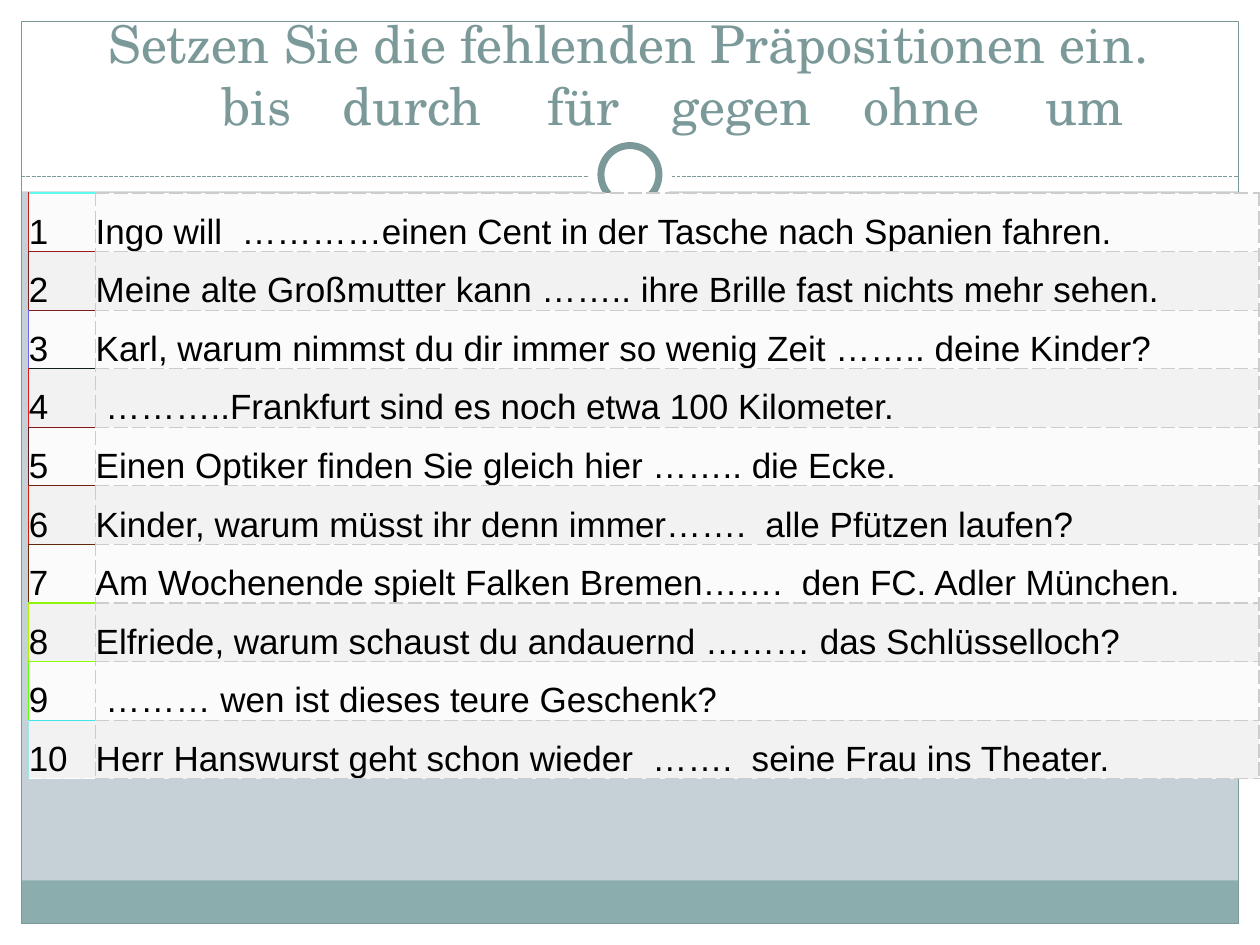
"""Build a German grammar slide with a gap-fill table on prepositions."""
from dataclasses import dataclass
from typing import Optional

from lxml import etree
from pptx import Presentation, util as u
from pptx.dml.color import RGBColor
from pptx.enum import dml, shapes, text
from pptx.oxml import ns

HUES = {"page": "C5D1D7", "white": "FFFFFF", "band": "8CADAE", "teal": "7C999A",
        "grid": "CCCCCC", "odd": "FBFBFB", "even": "F2F2F2", "ink": "000000"}
WIDE, HIGH, EDGE = 25.4, 19.05, 0.43
HEAD, RULE = 3.86, 3.56
RECT, OVAL = shapes.MSO_SHAPE.RECTANGLE, shapes.MSO_SHAPE.OVAL
WORDS = ["bis", "durch", "für", "gegen", "ohne", "um"]
STOPS = [3.63, 6.07, 10.2, 12.7, 16.57, 20.24]


@dataclass
class Part:
    """A piece of the frame, in centimetres."""
    left: float
    top: float
    width: float
    height: float
    fill: Optional[str] = None
    line: float = 0
    kind: shapes.MSO_SHAPE = RECT


@dataclass
class Task:
    """A sentence with the colours of its number cell's left and lower edge."""
    words: str
    left: str
    base: str


def ring(size: float, line: float = 0) -> Part:
    """Return a circle centred on the rule."""
    return Part((WIDE - size) / 2, RULE - 0.04 - size / 2, size, size, "white", line, OVAL)


PARTS = [
    Part(0, HIGH - EDGE, WIDE, EDGE, "white"),
    Part(0, 0, WIDE, HEAD, "white"),
    Part(0, 0, EDGE, HIGH, "white"),
    Part(WIDE - EDGE, 0, EDGE, HIGH, "white"),
    Part(EDGE, 17.75, WIDE - 2 * EDGE, 0.87, "band"),
    Part(EDGE, EDGE, WIDE - 2 * EDGE, HIGH - 2 * EDGE, line=0.75),
]
TASKS = [
    Task("Ingo will  …………einen Cent in der Tasche nach Spanien fahren.", "C01F1C", "A01A1C"),
    Task("Meine alte Großmutter kann …….. ihre Brille fast nichts mehr sehen.", "801F1C", "801E1C"),
    Task("Karl, warum nimmst du dir immer so wenig Zeit …….. deine Kinder?", "7067F3", "101D1C"),
    Task(" ………..Frankfurt sind es noch etwa 100 Kilometer.", "E01C1C", "801A1C"),
    Task("Einen Optiker finden Sie gleich hier …….. die Ecke.", "601A1C", "70200D"),
    Task("Kinder, warum müsst ihr denn immer…….  alle Pfützen laufen?", "D0200D", "60270D"),
    Task("Am Wochenende spielt Falken Bremen…….  den FC. Adler München.", "70280D", "90F20D"),
    Task("Elfriede, warum schaust du andauernd ……… das Schlüsselloch?", "B0F20D", "90FC0D"),
    Task(" ……… wen ist dieses teure Geschenk?", "60FD0D", "40E5E9"),
    Task("Herr Hanswurst geht schon wieder  …….  seine Frau ins Theater.", "A0E5E9", "FFFFFF"),
]


def tint(name: str) -> RGBColor:
    """Return a named colour."""
    return RGBColor.from_string(HUES[name])


def draw_part(slide, part: Part) -> None:
    """Draw one piece of the frame."""
    box = (u.Cm(v) for v in (part.left, part.top, part.width, part.height))
    shape = slide.shapes.add_shape(part.kind, *box)
    shape.shadow.inherit = False
    if part.fill:
        shape.fill.solid()
        shape.fill.fore_color.rgb = tint(part.fill)
    else:
        shape.fill.background()
    if part.line:
        shape.line.color.rgb = tint("teal")
        shape.line.width = u.Pt(part.line)
    else:
        shape.line.fill.background()


def draw_rule(slide) -> None:
    """Draw the dashed rule under the title."""
    rule = slide.shapes.add_connector(
        shapes.MSO_CONNECTOR.STRAIGHT, u.Cm(EDGE), u.Cm(RULE), u.Cm(WIDE - EDGE), u.Cm(RULE))
    rule.line.color.rgb = tint("teal")
    rule.line.width = u.Pt(0.75)
    rule.line.dash_style = dml.MSO_LINE.SQUARE_DOT
    etree.SubElement(rule._element.spPr, ns.qn("a:effectLst"))


def draw_title(slide) -> None:
    """Fill the title, with the prepositions set on tab stops."""
    title = slide.shapes.title
    title.left, title.top, title.width, title.height = map(u.Cm, (0.84, 0.64, 23.7, 2.11))
    slide.shapes._spTree.append(title._element)
    frame = title.text_frame
    frame.margin_left = frame.margin_right = frame.margin_top = frame.margin_bottom = 0
    frame.vertical_anchor = text.MSO_ANCHOR.BOTTOM
    frame.auto_size = text.MSO_AUTO_SIZE.NONE
    frame.text = "Setzen Sie die fehlenden Präpositionen ein.\n" + "".join("\t" + w for w in WORDS)
    first, last = frame.paragraphs
    first.alignment, last.alignment = text.PP_ALIGN.CENTER, text.PP_ALIGN.LEFT
    tabs = etree.SubElement(last._p.get_or_add_pPr(), ns.qn("a:tabLst"))
    for stop in STOPS:
        etree.SubElement(tabs, ns.qn("a:tab"), pos=str(u.Cm(stop)), algn="l")
    for para in frame.paragraphs:
        para.space_before = u.Pt(0)
        for run in para.runs:
            style(run.font, "TeX Gyre Schola", 29.7, "teal")


def style(font, face: str, size: float, hue: str) -> None:
    """Set the look of a font."""
    font.name, font.size = face, u.Pt(size)
    font.color.rgb = tint(hue)


def add_edge(cell, side: str, hue: str, dash: str) -> None:
    """Add one border to a cell."""
    line = etree.SubElement(cell._tc.get_or_add_tcPr(), ns.qn("a:ln" + side), w=str(u.Pt(0.75)))
    fill = etree.SubElement(line, ns.qn("a:solidFill"))
    etree.SubElement(fill, ns.qn("a:srgbClr"), val=hue)
    etree.SubElement(line, ns.qn("a:prstDash"), val=dash)


def fill_cell(cell, words: str, hue: str, edges: dict[str, tuple[str, str]]) -> None:
    """Set the text, borders and fill of a cell."""
    cell.margin_left = cell.margin_right = cell.margin_top = cell.margin_bottom = 0
    cell.vertical_anchor = text.MSO_ANCHOR.MIDDLE
    for side, (edge, dash) in edges.items():
        add_edge(cell, side, edge, dash)
    cell.fill.solid()
    cell.fill.fore_color.rgb = tint(hue)
    cell.text_frame.text = words
    para = cell.text_frame.paragraphs[0]
    para.line_spacing = 1.5
    style(para.runs[0].font, "Arial", 20, "ink")


def draw_table(slide) -> None:
    """Draw the numbered sentences."""
    row = 1.18
    grid = slide.shapes.add_table(len(TASKS), 2, u.Cm(0.58), u.Cm(3.89),
                                  u.Cm(24.8), u.Cm(row * len(TASKS))).table
    grid.first_row = grid.horz_banding = False
    grid.columns[0].width, grid.columns[1].width = u.Cm(1.35), u.Cm(23.45)
    plain = (HUES["grid"], "dash")
    above = ("60F9F2", "solid")
    for i, task in enumerate(TASKS):
        grid.rows[i].height = u.Cm(row)
        hue = "even" if i % 2 else "odd"
        base = (task.base, "dash" if task is TASKS[-1] else "solid")
        edges = {"L": (task.left, "solid"), "R": plain, "T": above, "B": base}
        fill_cell(grid.cell(i, 0), str(i + 1), hue, edges)
        fill_cell(grid.cell(i, 1), task.words, hue, dict.fromkeys("LRTB", plain))
        above = base


def main() -> None:
    """Build and save the slide."""
    deck = Presentation()
    deck.slide_width, deck.slide_height = u.Cm(WIDE), u.Cm(HIGH)
    slide = deck.slides.add_slide(deck.slide_layouts[5])
    slide.background.fill.solid()
    slide.background.fill.fore_color.rgb = tint("page")
    for part in PARTS:
        draw_part(slide, part)
    draw_rule(slide)
    for part in (ring(1.7), ring(1.17, 4)):
        draw_part(slide, part)
    draw_title(slide)
    draw_table(slide)
    deck.save("out.pptx")


if __name__ == "__main__":
    main()
